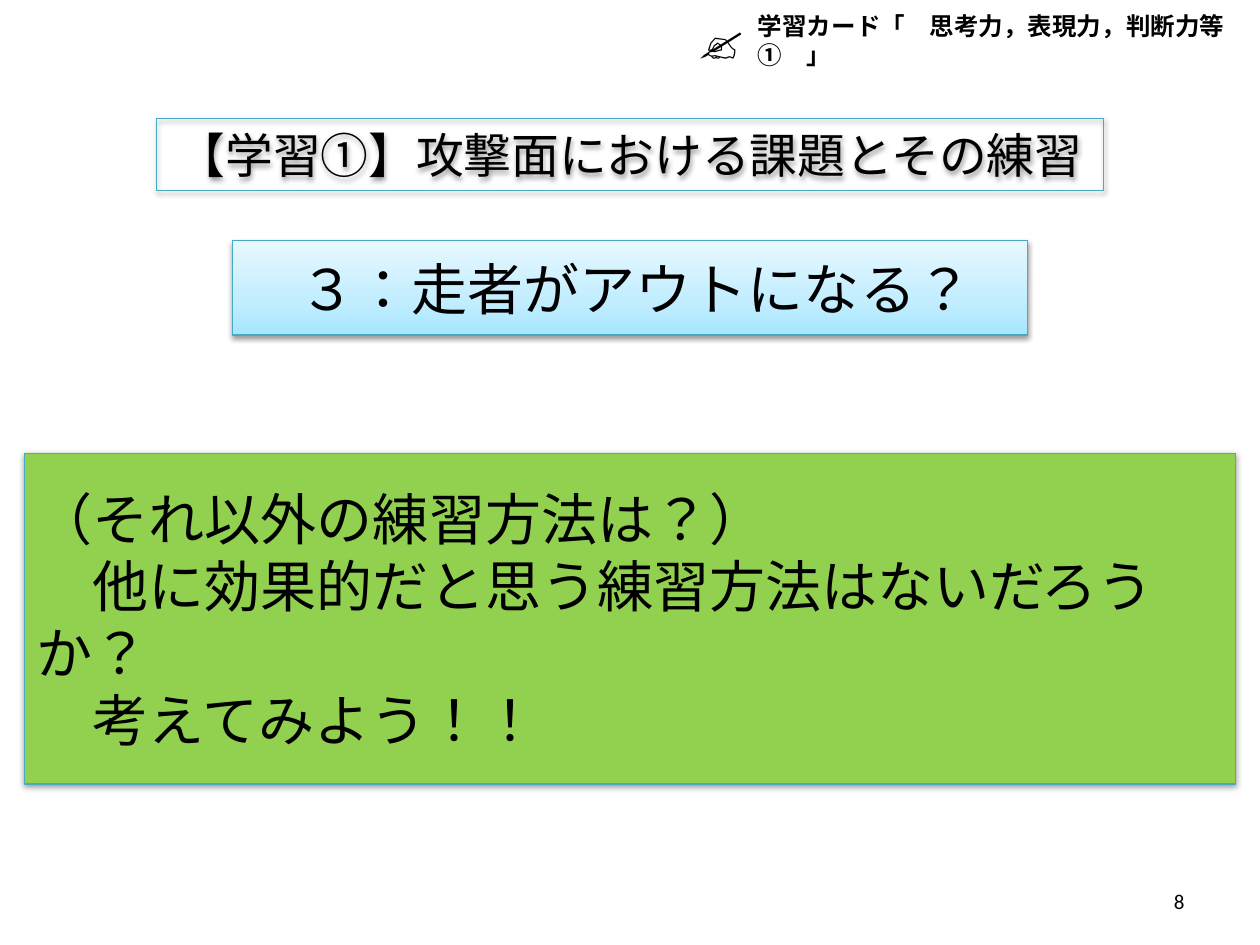
"""Builds a lesson slide that asks pupils for further practice methods."""
from copy import deepcopy

from pptx import Presentation
from pptx.dml.color import RGBColor
from pptx.enum.lang import MSO_LANGUAGE_ID
from pptx.enum.shapes import MSO_SHAPE
from pptx.enum.text import MSO_ANCHOR, PP_ALIGN
from pptx.oxml import parse_xml
from pptx.oxml.ns import nsdecls, qn
from pptx.util import Pt

RECTANGLE = MSO_SHAPE.RECTANGLE
MIDDLE = MSO_ANCHOR.MIDDLE
LEFT, CENTER, RIGHT = PP_ALIGN.LEFT, PP_ALIGN.CENTER, PP_ALIGN.RIGHT
JAPANESE = MSO_LANGUAGE_ID.JAPANESE

BLACK = RGBColor(0x00, 0x00, 0x00)
GREEN = RGBColor(0x92, 0xD0, 0x50)
TEAL = RGBColor(0x46, 0xAA, 0xC5)
SKY = RGBColor(0xA7, 0xE6, 0xFF)
PALE_SKY = RGBColor(0xC1, 0xED, 0xFF)
LIGHT_SKY = RGBColor(0xE7, 0xF8, 0xFF)

FONT = "Calibri"
BLANK_LAYOUT = 6
SKY_STOPS = [(0, SKY), (0.35, PALE_SKY), (1, LIGHT_SKY)]


def write_text(box, *lines, size, align=LEFT, bold=False, wrap=True):
    """Write Japanese paragraphs whose punctuation stays inside the box."""
    frame = box.text_frame
    frame.word_wrap = wrap
    frame.vertical_anchor = MIDDLE
    for index, line in enumerate(lines):
        para = frame.add_paragraph() if index else frame.paragraphs[0]
        para.alignment = align
        para.font.language_id = JAPANESE
        para.runs or para.add_run()
        span = para.runs[0]
        span.text = line
        span.font.name = FONT
        span.font.size = Pt(size)
        span.font.bold = bold
        span.font.color.rgb = BLACK
        span.font.language_id = JAPANESE
    for settings in box.element.iter(qn("a:pPr")):
        settings.set("hangingPunct", "0")


def add_shadow(box):
    """Give the box a soft shadow that falls straight down."""
    box.shadow.inherit = False
    effects = box.element.spPr.find(qn("a:effectLst"))
    effects.append(parse_xml(
        f'<a:outerShdw {nsdecls("a")} blurRad="{Pt(3.1)}" dist="{Pt(1.6)}" '
        'dir="5400000" rotWithShape="0"><a:srgbClr val="000000">'
        '<a:alpha val="38000"/></a:srgbClr></a:outerShdw>'))


def fill_gradient(box, stops):
    """Fill the box with the colour stops, rising from its bottom edge."""
    box.fill.gradient()
    box.fill.gradient_angle = 90
    stop_list = box.element.spPr.find(".//" + qn("a:gsLst"))
    while len(stop_list) < len(stops):
        stop_list.append(deepcopy(stop_list[0]))
    for stop, (position, color) in zip(box.fill.gradient_stops, stops):
        stop.position = position
        stop.color.rgb = color


def add_panel(page, left, top, width, height):
    """Add an unfilled rectangle with a thin outline and a shadow."""
    box = page.shapes.add_shape(
        RECTANGLE, Pt(left), Pt(top), Pt(width), Pt(height))
    box.fill.background()
    box.line.color.rgb = TEAL
    box.line.width = Pt(0.75)
    add_shadow(box)
    return box


def add_label(page, left, top, width, height, text, **text_format):
    """Add a plain text box."""
    box = page.shapes.add_textbox(Pt(left), Pt(top), Pt(width), Pt(height))
    write_text(box, text, **text_format)


def main():
    """Build and save the slide."""
    deck = Presentation()
    deck.slide_width, deck.slide_height = Pt(720), Pt(540)
    page = deck.slides.add_slide(deck.slide_layouts[BLANK_LAYOUT])

    question = add_panel(page, 14, 259, 692, 189)
    question.fill.solid()
    question.fill.fore_color.rgb = GREEN
    write_text(question, "（それ以外の練習方法は？）",
               "　他に効果的だと思う練習方法はないだろうか？",
               "　考えてみよう！！", size=32)

    title = add_panel(page, 133, 137.5, 454, 54)
    fill_gradient(title, SKY_STOPS)
    write_text(title, " ３：走者がアウトになる？", size=32, align=CENTER)

    add_label(page, 660, 500.5, 24, 29, "8", size=12, align=RIGHT)

    heading = add_panel(page, 89.5, 67.75, 541, 41)
    write_text(heading, "【学習①】攻撃面における課題とその練習",
               size=27.3, align=CENTER)

    add_label(page, 392, 2, 34, 41, "✍", size=28, wrap=False)
    add_label(page, 426, 11, 292, 24,
              "学習カード「　思考力，表現力，判断力等①　」", size=14, bold=True)

    deck.save("out.pptx")


if __name__ == "__main__":
    main()
